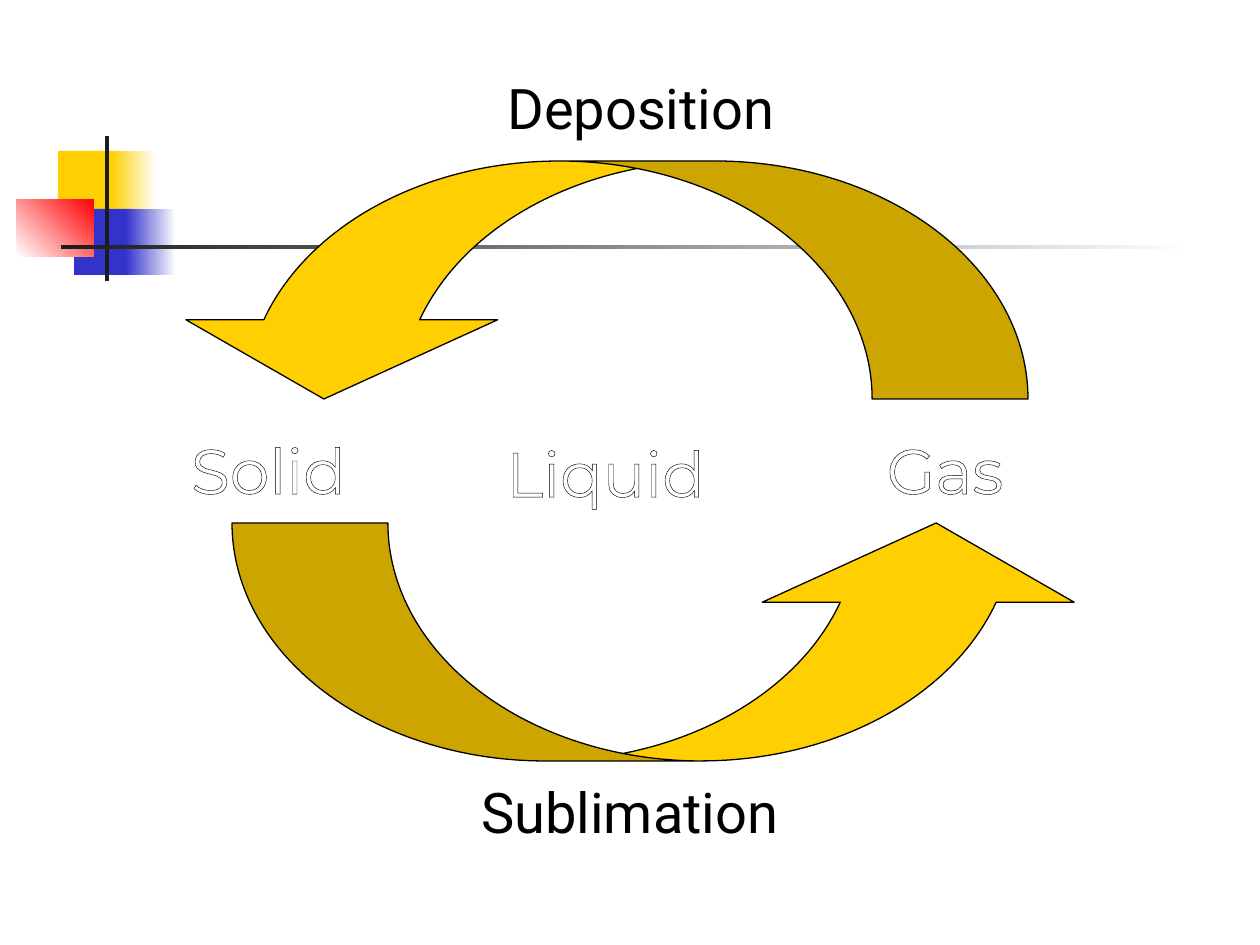
from lxml.etree import SubElement
from pptx import Presentation
from pptx.dml.color import RGBColor
from pptx.enum.shapes import MSO_SHAPE
from pptx.enum.text import MSO_AUTO_SIZE, PP_ALIGN
from pptx.oxml.ns import qn
from pptx.util import Emu, Pt

PX = 914400 / 126
COLORS = {
    "yellow": "FFCF01", "blue": "3333CC", "red": "FF0000",
    "ink": "1C1C1C", "white": "FFFFFF", "black": "000000",
}

# Content: boxes are left, top, width, height in px
DECORATION = [  # box, colours (two make a gradient), gradient angle
    ((58, 151, 60, 66), ("yellow",), 0),
    ((111, 151, 45, 66), ("yellow", "white"), 0),
    ((74, 209, 58, 66), ("blue",), 0),
    ((126, 209, 50, 66), ("blue", "white"), 0),
    ((17, 199, 77, 58), ("white", "red"), 45),
    ((105, 136, 4, 145), ("ink",), 0),
    ((61, 245, 1134, 4), ("ink", "white"), 0),
]
PROCESSES = [
    ("Deposition", (158, 67, 966, 79)),
    ("Sublimation", (147, 771, 966, 79)),
]
STATES = [
    ("Solid", (178, 425, 181, 74)),
    ("Liquid", (502, 428, 207, 82)),
    ("Gas", (871, 425, 148, 69)),
]
ARROWS = [  # box, rotation
    ((232, 523, 860, 238), 0),
    ((168, 161, 860, 238), 180),
]
ARROW_ADJUSTMENTS = (0.655, 1.31, 0.333)
PROCESS_FORMAT = {"name": "Roboto", "size": Pt(32)}
STATE_FORMAT = {"name": "Montserrat", "size": Pt(36)}


def emu(box):
    return [Emu(round(value * PX)) for value in box]


def rgb(name):
    return RGBColor.from_string(COLORS[name])


def add_filled_shape(slide, kind, box, colors, angle=0):
    shape = slide.shapes.add_shape(kind, *emu(box))
    shape.shadow.inherit = False
    shape.line.fill.background()
    if len(colors) == 1:
        shape.fill.solid()
        shape.fill.fore_color.rgb = rgb(colors[0])
    else:
        shape.fill.gradient()
        shape.fill.gradient_angle = angle
        for stop, color in zip(shape.fill.gradient_stops, colors):
            stop.color.rgb = rgb(color)
    return shape


def add_label(slide, text, box, font_format, color, wrap):
    frame = slide.shapes.add_textbox(*emu(box)).text_frame
    frame.word_wrap = wrap
    frame.auto_size = MSO_AUTO_SIZE.SHAPE_TO_FIT_TEXT if wrap else MSO_AUTO_SIZE.NONE
    paragraph = frame.paragraphs[0]
    paragraph.alignment = PP_ALIGN.CENTER
    run = paragraph.add_run()
    run.text = text
    for attribute, value in font_format.items():
        setattr(run.font, attribute, value)
    run.font.color.rgb = rgb(color)
    return run


def outline_text(run, color, width):
    properties = run.font._element
    line = SubElement(properties, qn("a:ln"), w=str(width))
    fill = SubElement(line, qn("a:solidFill"))
    SubElement(fill, qn("a:srgbClr"), val=COLORS[color])
    properties.insert(0, line)


def main():
    presentation = Presentation()
    presentation.slide_width, presentation.slide_height = emu((1260, 945))
    slide = presentation.slides.add_slide(presentation.slide_layouts[6])

    # Corner squares and rules
    for box, colors, angle in DECORATION:
        add_filled_shape(slide, MSO_SHAPE.RECTANGLE, box, colors, angle)

    # States of matter
    for text, box in STATES:
        run = add_label(slide, text, box, STATE_FORMAT, "white", False)
        outline_text(run, "black", Pt(0.75))

    # Curved arrows between solid and gas
    for box, rotation in ARROWS:
        arrow = add_filled_shape(slide, MSO_SHAPE.CURVED_UP_ARROW, box, ("yellow",))
        arrow.rotation = rotation
        arrow.line.color.rgb = rgb("black")
        arrow.line.width = Pt(0.75)
        for index, value in enumerate(ARROW_ADJUSTMENTS):
            arrow.adjustments[index] = value

    # Process names
    for text, box in PROCESSES:
        add_label(slide, text, box, PROCESS_FORMAT, "black", True)

    presentation.save("out.pptx")


if __name__ == "__main__":
    main()
